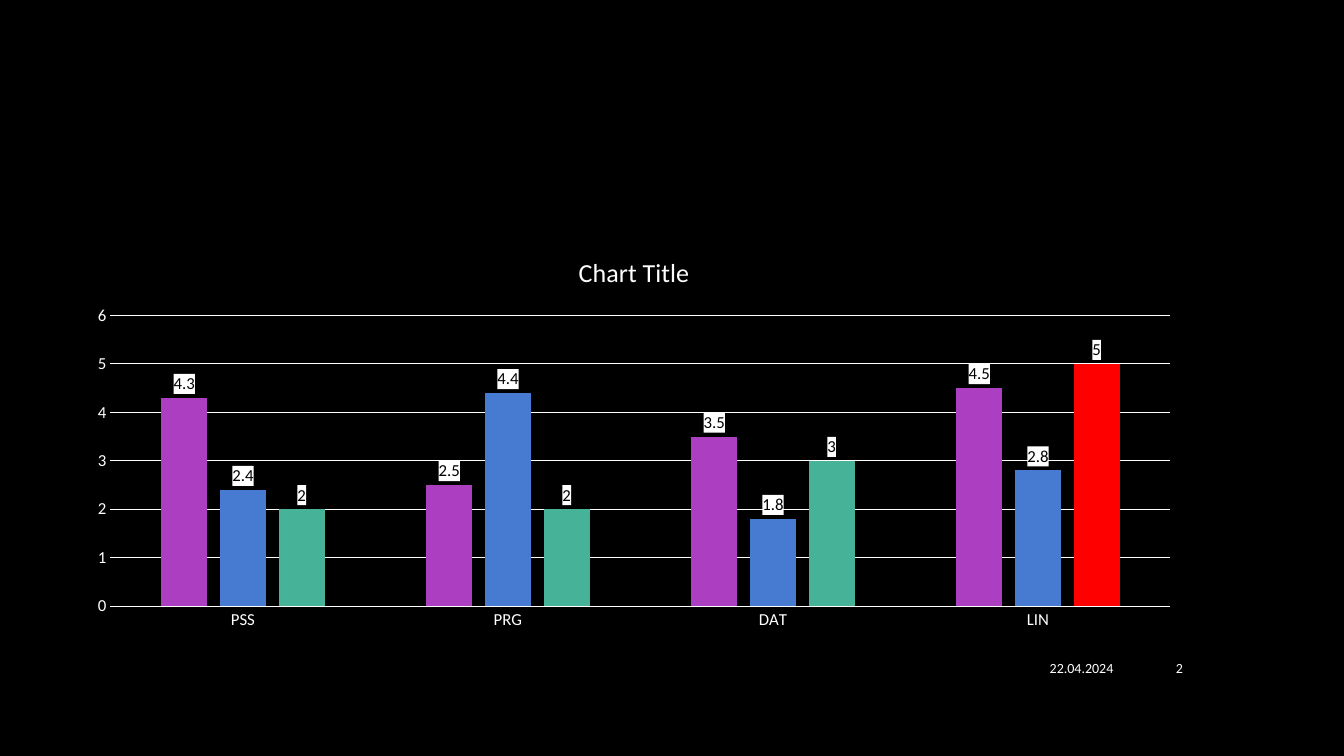
from dataclasses import dataclass, field

from lxml import etree
from pptx import Presentation
from pptx.chart.data import CategoryChartData
from pptx.dml.color import RGBColor
from pptx.enum.chart import XL_CHART_TYPE as ChartType
from pptx.enum.chart import XL_LABEL_POSITION as LabelPosition
from pptx.enum.chart import XL_TICK_MARK as TickMark
from pptx.enum.text import MSO_ANCHOR as Anchor
from pptx.enum.text import PP_ALIGN as Align
from pptx.oxml import parse_xml
from pptx.oxml.ns import nsdecls, qn
from pptx.util import Inches, Pt

BLACK = RGBColor(0x00, 0x00, 0x00)
WHITE = RGBColor(0xFF, 0xFF, 0xFF)
PURPLE = RGBColor(0xAC, 0x3E, 0xC1)
BLUE = RGBColor(0x47, 0x7B, 0xD1)
GREEN = RGBColor(0x46, 0xB2, 0x98)
RED = RGBColor(0xFF, 0x00, 0x00)
FONT = "Calibri"


@dataclass
class Series:
    name: str
    values: tuple[float, ...]
    color: RGBColor
    highlights: dict[int, RGBColor] = field(default_factory=dict)


@dataclass
class FooterText:
    text: str
    left: float
    width: float


CATEGORIES = ("PSS", "PRG", "DAT", "LIN")
SERIES = (
    Series("Series 1", (4.3, 2.5, 3.5, 4.5), PURPLE),
    Series("Series 2", (2.4, 4.4, 1.8, 2.8), BLUE),
    Series("Series 3", (2, 2, 3, 5), GREEN, {3: RED}),
)
FOOTER = (FooterText("22.04.2024", 9.39, 1.75), FooterText("2", 11.23, 0.6))


def style_font(font, size: float, color: RGBColor) -> None:
    font.name = FONT
    font.size = Pt(size)
    font.bold = False
    font.color.rgb = color


def style_line(line, color: RGBColor) -> None:
    line.color.rgb = color
    line.width = Pt(0.75)


def style_axis(axis) -> None:
    axis.major_tick_mark = TickMark.NONE
    axis.minor_tick_mark = TickMark.NONE
    style_font(axis.tick_labels.font, 12, WHITE)


def fill_labels(series, color: RGBColor) -> None:
    """Put a solid background behind the data labels of a series."""
    background = parse_xml(f"<c:spPr {nsdecls('c', 'a')}/>")
    fill = etree.SubElement(background, qn("a:solidFill"))
    etree.SubElement(fill, qn("a:srgbClr"), val=str(color))
    labels = series._element.find(qn("c:dLbls"))
    labels.find(qn("c:txPr")).addprevious(background)


def style_series(series, look: Series) -> None:
    series.format.fill.solid()
    series.format.fill.fore_color.rgb = look.color
    series.invert_if_negative = False
    for index, color in look.highlights.items():
        fill = series.points[index].format.fill
        fill.solid()
        fill.fore_color.rgb = color
    labels = series.data_labels
    labels.show_value = True
    labels.position = LabelPosition.OUTSIDE_END
    style_font(labels.font, 12, BLACK)
    fill_labels(series, WHITE)


def add_column_chart(page) -> None:
    data = CategoryChartData()
    data.categories = CATEGORIES
    for look in SERIES:
        data.add_series(look.name, look.values)
    chart = page.shapes.add_chart(
        ChartType.COLUMN_CLUSTERED, Inches(0.75), Inches(2.34),
        Inches(11.08), Inches(3.99), data).chart
    style_font(chart.font, 10, WHITE)
    chart.has_legend = False

    # Chart title
    chart.has_title = True
    chart.chart_title.include_in_layout = False
    span = chart.chart_title.text_frame.paragraphs[0].add_run()
    span.text = "Chart Title"
    style_font(span.font, 18.6, WHITE)

    # Axes and gridlines
    style_axis(chart.category_axis)
    style_line(chart.category_axis.format.line, WHITE)
    values = chart.value_axis
    style_axis(values)
    values.format.line.fill.background()
    values.has_major_gridlines = True
    style_line(values.major_gridlines.format.line, WHITE)

    # Columns
    plot = chart.plots[0]
    plot.vary_by_categories = False
    plot.gap_width = 219
    plot.overlap = -27
    for series, look in zip(plot.series, SERIES):
        style_series(series, look)


def add_footer_text(page, item: FooterText) -> None:
    box = page.shapes.add_textbox(
        Inches(item.left), Inches(6.42), Inches(item.width), Inches(0.41))
    frame = box.text_frame
    frame.word_wrap = True
    frame.vertical_anchor = Anchor.MIDDLE
    para = frame.paragraphs[0]
    para.alignment = Align.RIGHT
    span = para.add_run()
    span.text = item.text
    style_font(span.font, 10, WHITE)


def main() -> None:
    deck = Presentation()
    deck.slide_width = Inches(13.33)
    deck.slide_height = Inches(7.5)
    page = deck.slides.add_slide(deck.slide_layouts[6])
    page.background.fill.solid()
    page.background.fill.fore_color.rgb = BLACK
    add_column_chart(page)
    for item in FOOTER:
        add_footer_text(page, item)
    deck.save("out.pptx")


if __name__ == "__main__":
    main()
